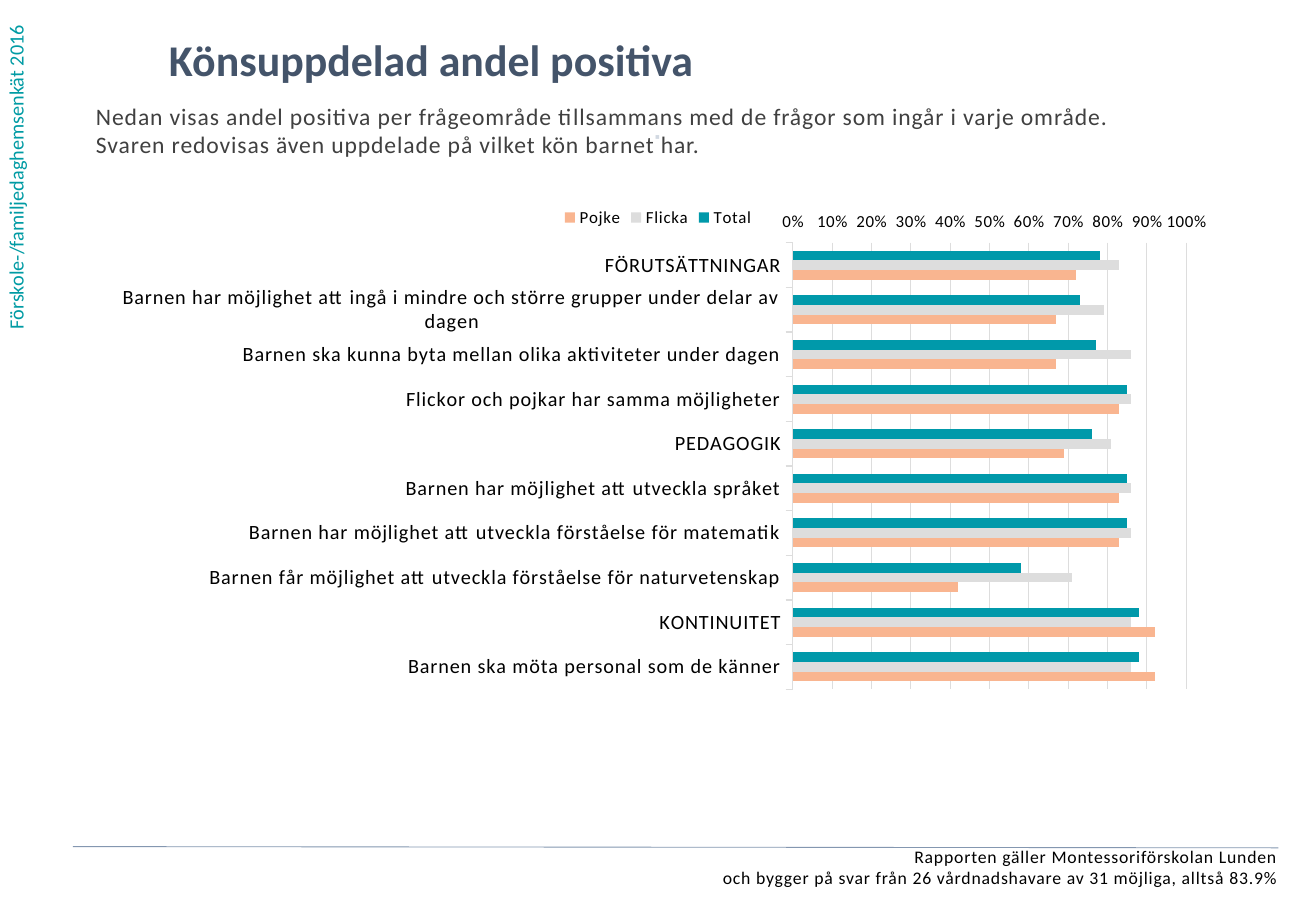
from dataclasses import dataclass

from lxml import etree
from pptx import Presentation
from pptx.chart.data import CategoryChartData
from pptx.dml.color import RGBColor
from pptx.enum.chart import XL_AXIS_CROSSES, XL_CHART_TYPE, XL_LEGEND_POSITION, XL_TICK_MARK
from pptx.enum.shapes import MSO_CONNECTOR
from pptx.enum.text import MSO_ANCHOR, MSO_AUTO_SIZE, PP_ALIGN
from pptx.oxml import parse_xml
from pptx.oxml.ns import qn
from pptx.util import Inches, Pt

BAR = XL_CHART_TYPE.BAR_CLUSTERED
LEGEND_TOP = XL_LEGEND_POSITION.TOP
CROSS_MAX = XL_AXIS_CROSSES.MAXIMUM
TICK_OUT = XL_TICK_MARK.OUTSIDE
STRAIGHT = MSO_CONNECTOR.STRAIGHT
TOP = MSO_ANCHOR.TOP
NO_FIT = MSO_AUTO_SIZE.NONE
LEFT, CENTER, RIGHT = PP_ALIGN.LEFT, PP_ALIGN.CENTER, PP_ALIGN.RIGHT

PLOT_LAYOUT = (
    '<c:layout xmlns:c="http://schemas.openxmlformats.org/drawingml/2006/chart">'
    '<c:manualLayout><c:layoutTarget val="inner"/>'
    '<c:xMode val="edge"/><c:yMode val="edge"/>'
    '<c:x val="{}"/><c:y val="{}"/><c:w val="{}"/><c:h val="{}"/>'
    '</c:manualLayout></c:layout>'
)


@dataclass(frozen=True)
class Theme:
    font: str = "Calibri"
    heading: str = "44546A"
    body: str = "404040"
    black: str = "000000"
    survey: str = "009BA4"
    dot: str = "D2D9E2"
    rule: str = "8497B0"
    grid: str = "DDDDDD"
    total: str = "0099AA"
    girl: str = "DDDDDD"
    boy: str = "F9B590"
    title_size: float = 26
    intro_size: float = 14
    label_size: float = 12
    footer_size: float = 10.5
    chart_size: float = 10
    spacing: str = "50"


def rgb(value):
    return RGBColor.from_string(value)


class ReportSlide:
    def __init__(self, presentation, theme):
        self.theme = theme
        self.slide = presentation.slides.add_slide(presentation.slide_layouts[5])

    def style_text(self, frame, text, size, color, bold=False, align=LEFT, spaced=True):
        frame.word_wrap = True
        frame.auto_size = NO_FIT
        frame.vertical_anchor = TOP
        frame.text = text
        for paragraph in frame.paragraphs:
            paragraph.alignment = align
            for run in paragraph.runs:
                run.font.name = self.theme.font
                run.font.size = Pt(size)
                run.font.bold = bold
                run.font.color.rgb = rgb(color)
                if spaced:
                    run.font._element.set("spc", self.theme.spacing)

    def remove_insets(self, frame):
        frame.margin_left = frame.margin_right = 0
        frame.margin_top = frame.margin_bottom = 0

    def title(self, box, text):
        heading = self.slide.shapes.title
        heading.left, heading.top, heading.width, heading.height = map(Inches, box)
        self.remove_insets(heading.text_frame)
        self.style_text(heading.text_frame, text, self.theme.title_size,
                        self.theme.heading, bold=True, spaced=False)

    def text(self, box, text, size, color, **options):
        frame = self.slide.shapes.add_textbox(*map(Inches, box)).text_frame
        self.remove_insets(frame)
        self.style_text(frame, text, size, color, **options)

    def side_text(self, box, text):
        frame = self.slide.shapes.add_textbox(*map(Inches, box)).text_frame
        self.style_text(frame, text, self.theme.label_size, self.theme.survey, spaced=False)
        frame._txBody.bodyPr.set("vert", "vert270")

    def rule(self, start, end):
        line = self.slide.shapes.add_connector(STRAIGHT, *map(Inches, start + end))
        line.line.color.rgb = rgb(self.theme.rule)
        line.line.width = Pt(0.5)
        etree.SubElement(line._element.spPr, qn("a:effectLst"))

    def bar_chart(self, box, layout, categories, series):
        theme = self.theme
        data = CategoryChartData(number_format="0%")
        data.categories = categories
        for name, values, _ in series:
            data.add_series(name, values)
        chart = self.slide.shapes.add_chart(BAR, *map(Inches, box), data).chart
        chart.has_title = False
        chart.font.name = theme.font
        chart.font.size = Pt(theme.chart_size)
        chart.font.color.rgb = rgb(theme.black)

        chart.has_legend = True
        chart.legend.position = LEGEND_TOP
        chart.legend.include_in_layout = False
        chart.legend.font.size = Pt(theme.chart_size)

        plot = chart.plots[0]
        plot.gap_width = 162
        plot.overlap = 0
        plot.vary_by_categories = False
        for bars, (_, _, color) in zip(plot.series, series):
            bars.format.fill.solid()
            bars.format.fill.fore_color.rgb = rgb(color)

        questions = chart.category_axis
        questions.reverse_order = True
        questions.crosses = CROSS_MAX
        questions.major_tick_mark = TICK_OUT
        questions.tick_labels.font.size = Pt(theme.label_size)

        shares = chart.value_axis
        shares.minimum_scale, shares.maximum_scale, shares.major_unit = 0, 1, 0.1
        shares.major_tick_mark = TICK_OUT
        shares.tick_labels.font.size = Pt(theme.chart_size)
        shares.tick_labels.number_format = "0%;0%"
        shares.tick_labels.number_format_is_linked = False
        shares.format.line.fill.background()
        shares.has_major_gridlines = True
        for line in (questions.format.line, shares.major_gridlines.format.line):
            line.color.rgb = rgb(theme.grid)
            line.width = Pt(0.75)

        plot_area = chart.element.find(".//" + qn("c:plotArea"))
        for automatic in plot_area.findall(qn("c:layout")):
            plot_area.remove(automatic)
        plot_area.insert(0, parse_xml(PLOT_LAYOUT.format(*layout)))
        for properties in chart.element.iter(qn("a:defRPr")):
            properties.set("spc", theme.spacing)


def main():
    theme = Theme()
    presentation = Presentation()
    presentation.slide_width, presentation.slide_height = Inches(10.83), Inches(7.5)
    report = ReportSlide(presentation, theme)

    report.side_text((-0.02, 0, 0.4, 2.81), "Förskole-/familjedaghemsenkät 2016")
    report.title((1.39, 0.27, 8.34, 0.57), "Könsuppdelad andel positiva")
    report.text(
        (0.79, 0.84, 9.46, 0.6),
        "Nedan visas andel positiva per frågeområde tillsammans med de frågor som ingår i varje område.\v"
        "Svaren redovisas även uppdelade på vilket kön barnet har.",
        theme.intro_size, theme.body)
    report.text(
        (0.12, 6.96, 10.4, 0.43),
        "Rapporten gäller Montessoriförskolan Lunden\v"
        "och bygger på svar från 26 vårdnadshavare av 31 möjliga, alltså 83.9%",
        theme.footer_size, theme.black, align=RIGHT)
    report.text((3.87, 1.02, 3.08, 0.39), "⋅", theme.label_size, theme.dot,
                bold=True, align=CENTER)

    answers = [
        ("FÖRUTSÄTTNINGAR", 0.78, 0.83, 0.72),
        ("Barnen har möjlighet att ingå i mindre och större grupper under delar av dagen", 0.73, 0.79, 0.67),
        ("Barnen ska kunna byta mellan olika aktiviteter under dagen", 0.77, 0.86, 0.67),
        ("Flickor och pojkar har samma möjligheter", 0.85, 0.86, 0.83),
        ("PEDAGOGIK", 0.76, 0.81, 0.69),
        ("Barnen har möjlighet att utveckla språket", 0.85, 0.86, 0.83),
        ("Barnen har möjlighet att utveckla förståelse för matematik", 0.85, 0.86, 0.83),
        ("Barnen får möjlighet att utveckla förståelse för naturvetenskap", 0.58, 0.71, 0.42),
        ("KONTINUITET", 0.88, 0.86, 0.92),
        ("Barnen ska möta personal som de känner", 0.88, 0.86, 0.92),
    ]
    questions, total, girls, boys = zip(*answers)
    report.bar_chart(
        (0.79, 1.6, 9.25, 4.43), (0.62, 0.09, 0.35, 0.83), questions,
        [("Total", total, theme.total), ("Flicka", girls, theme.girl), ("Pojke", boys, theme.boy)])

    report.rule((0.6, 6.97), (10.52, 6.98))
    presentation.save("out.pptx")


if __name__ == "__main__":
    main()
